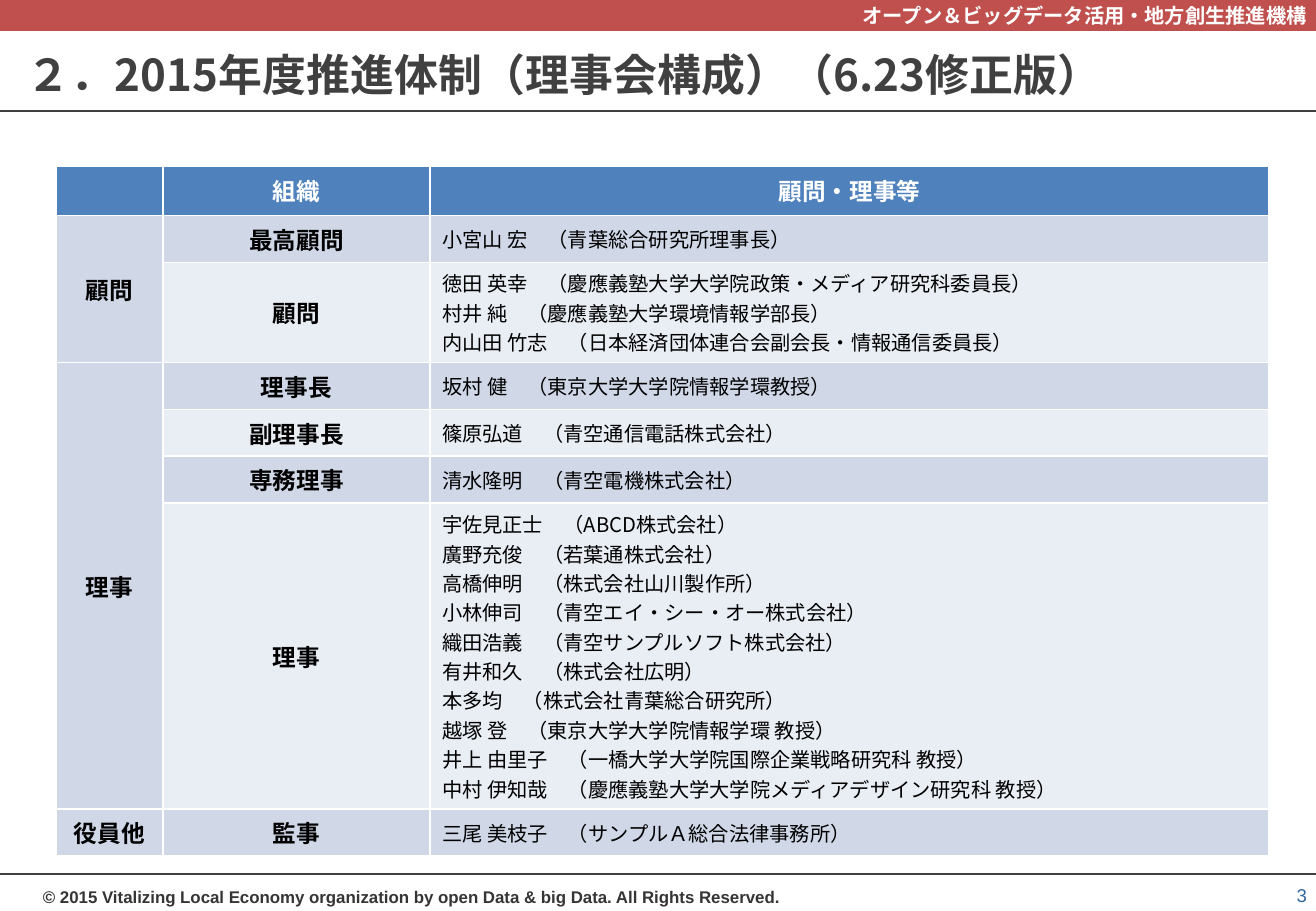
from pptx import Presentation, util as u
from pptx.dml.color import RGBColor
from pptx.enum import lang, shapes, text
from pptx.oxml.ns import qn

PX = 914400 / 121.5
COLORS = {"banner": "C0504D", "rule": "404040", "title": "404040", "footer": "353535",
          "number": "336699", "header": "4F81BD", "dark": "D0D8E8", "light": "E9EDF4",
          "white": "FFFFFF", "black": "000000"}
JAPANESE, LATIN = "Noto Sans CJK JP", "Arial"
LEFT, CENTER, RIGHT = text.PP_ALIGN.LEFT, text.PP_ALIGN.CENTER, text.PP_ALIGN.RIGHT
MIDDLE, TOP, BOTTOM = text.MSO_ANCHOR.MIDDLE, text.MSO_ANCHOR.TOP, text.MSO_ANCHOR.BOTTOM


def px(*lengths):
    return [u.Emu(round(length * PX)) for length in lengths]


def write(frame, lines, size, color, bold=True, align=LEFT, font=JAPANESE):
    """Fill a text frame with one formatted paragraph per line."""
    for index, line in enumerate(lines):
        paragraph = frame.add_paragraph() if index else frame.paragraphs[0]
        paragraph.alignment = align
        run = paragraph.add_run()
        run.text = line
        run.font.color.rgb = RGBColor.from_string(COLORS[color])
        language = lang.MSO_LANGUAGE_ID.JAPANESE if font == JAPANESE else lang.MSO_LANGUAGE_ID.ENGLISH_US
        formats = {"name": font, "size": u.Pt(size), "bold": bold, "language_id": language}
        for name, value in formats.items():
            setattr(run.font, name, value)
        east_asian = run.font._element.makeelement(qn("a:ea"), {"typeface": font})
        run.font._element.find(qn("a:latin")).addnext(east_asian)


presentation = Presentation()
presentation.slide_width, presentation.slide_height = px(1316, 911)
slide = presentation.slides.add_slide(presentation.slide_layouts[5])

# Banner, title, footer and page number
banner = slide.shapes.add_shape(shapes.MSO_SHAPE.RECTANGLE, *px(0, 0, 1316, 30))
banner.shadow.inherit = False
banner.fill.solid()
banner.fill.fore_color.rgb = banner.line.color.rgb = RGBColor.from_string(COLORS["banner"])
banner.line.width = u.Pt(0.75)

title = slide.shapes.title
title.left, title.top, title.width, title.height = px(27, 35, 1214, 78)
footer = slide.shapes.add_textbox(*px(34, 882, 767, 29))
page_number = slide.shapes.add_textbox(*px(1262, 877, 54, 34))

texts = [
    (banner, "オープン＆ビッグデータ活用・地方創生推進機構", 12, "white", True, RIGHT, JAPANESE, MIDDLE, (9, 5)),
    (title, "２．2015年度推進体制（理事会構成）（6.23修正版）", 26, "title", True, LEFT, JAPANESE, MIDDLE, (0, 0)),
    (footer, "© 2015 Vitalizing Local Economy organization by open Data & big Data. All Rights Reserved.",
     10, "footer", True, LEFT, LATIN, TOP, (9, 5)),
    (page_number, "3", 11, "number", False, RIGHT, LATIN, BOTTOM, (9, 5)),
]
for shape, line, size, color, bold, align, font, anchor, insets in texts:
    side, edge = px(*insets)
    formats = {"word_wrap": True, "auto_size": text.MSO_AUTO_SIZE.NONE, "vertical_anchor": anchor,
               "margin_left": side, "margin_right": side, "margin_top": edge, "margin_bottom": edge}
    for name, value in formats.items():
        setattr(shape.text_frame, name, value)
    write(shape.text_frame, [line], size, color, bold, align, font)

for y in (111, 874):
    rule = slide.shapes.add_connector(shapes.MSO_CONNECTOR.STRAIGHT, *px(0, y, 1316, y))
    rule.line.color.rgb = RGBColor.from_string(COLORS["rule"])
    rule.line.width = u.Pt(1)
    properties = rule._element.spPr
    properties.append(properties.makeelement(qn("a:effectLst"), {}))

# Board members: group, post, people, row height
rows = [
    ("", "組織", ["顧問・理事等"], 45),
    ("顧問", "最高顧問", ["小宮山 宏　（青葉総合研究所理事長）"], 47),
    ("", "顧問", ["徳田 英幸　（慶應義塾大学大学院政策・メディア研究科委員長）",
                "村井 純　（慶應義塾大学環境情報学部長）",
                "内山田 竹志　（日本経済団体連合会副会長・情報通信委員長）"], 100),
    ("理事", "理事長", ["坂村 健　（東京大学大学院情報学環教授）"], 47),
    ("", "副理事長", ["篠原弘道　（青空通信電話株式会社）"], 46),
    ("", "専務理事", ["清水隆明　（青空電機株式会社）"], 47),
    ("", "理事", ["宇佐見正士　（ABCD株式会社）",
                "廣野充俊　（若葉通株式会社）",
                "高橋伸明　（株式会社山川製作所）",
                "小林伸司　（青空エイ・シー・オー株式会社）",
                "織田浩義　（青空サンプルソフト株式会社）",
                "有井和久　（株式会社広明）",
                "本多均　（株式会社青葉総合研究所）",
                "越塚 登　（東京大学大学院情報学環 教授）",
                "井上 由里子　（一橋大学大学院国際企業戦略研究科 教授）",
                "中村 伊知哉　（慶應義塾大学大学院メディアデザイン研究科 教授）"], 306),
    ("役員他", "監事", ["三尾 美枝子　（サンプルＡ総合法律事務所）"], 46),
]
widths = [107, 267, 839]
heights = [row[3] for row in rows]
table = slide.shapes.add_table(len(rows), len(widths), *px(56, 166, sum(widths), sum(heights))).table
for column, width in zip(table.columns, px(*widths)):
    column.width = width
for row, height in zip(table.rows, px(*heights)):
    row.height = height

for index, (group, post, people, _) in enumerate(rows):
    band = "dark" if post != "顧問" and post != "副理事長" and post != "理事" else "light"
    for column, lines in enumerate(([group], [post], people)):
        cell = table.cell(index, column)
        cell.vertical_anchor = MIDDLE
        cell.fill.solid()
        fill = "header" if index == 0 else "dark" if column == 0 else band
        cell.fill.fore_color.rgb = RGBColor.from_string(COLORS[fill])
        is_person = index > 0 and column == 2
        if lines != [""]:
            write(cell.text_frame, lines, 12 if is_person else 14, "black" if index else "white",
                  not is_person, LEFT if is_person else CENTER)

for first, last in ((1, 2), (3, 6)):
    table.cell(first, 0).merge(table.cell(last, 0))

presentation.save("out.pptx")
